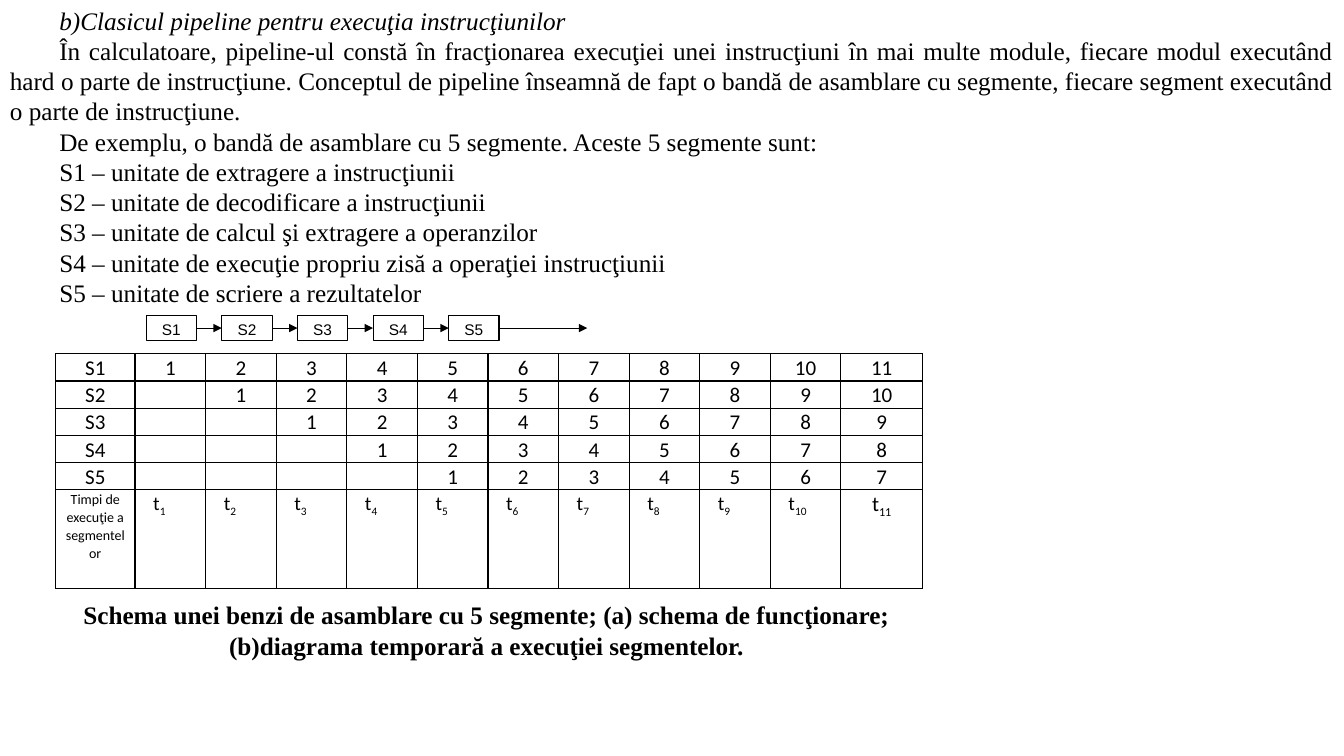
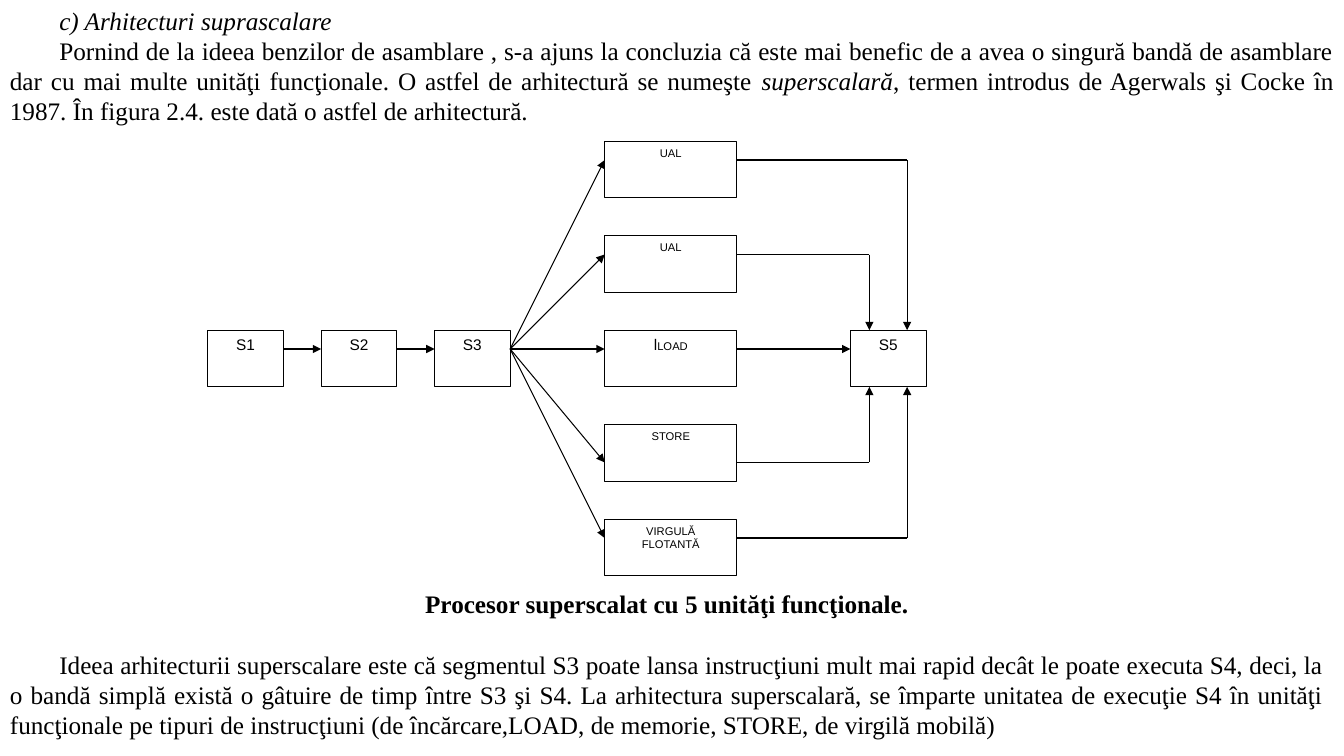
import dataclasses

import lxml.etree
import pptx
import pptx.dml.color
import pptx.enum.shapes
import pptx.enum.text
import pptx.oxml.ns
import pptx.util

ALIGN = pptx.enum.text.PP_ALIGN
Inches = pptx.util.Inches
Pt = pptx.util.Pt
qn = pptx.oxml.ns.qn


@dataclasses.dataclass(frozen=True)
class Theme:
    ink: pptx.dml.color.RGBColor = pptx.dml.color.RGBColor(0, 0, 0)
    paper: pptx.dml.color.RGBColor = pptx.dml.color.RGBColor(255, 255, 255)
    serif: str = "Times New Roman"
    sans: str = "Arial"
    table_font: str = "Calibri"
    body: float = 18
    label: float = 11
    small: float = 8
    cell: float = 15
    time: float = 14
    note: float = 10
    line: float = 0.75
    border: float = 1
    indent: float = 0.49
    body_spacing: float = 1.0
    cell_spacing: float = 1.07


THEME = Theme()
WIDTH, HEIGHT = 13.33, 7.5

PIPELINE_TITLE = "b)Clasicul pipeline pentru execuţia instrucţiunilor"
PIPELINE_TEXT = [
    "În calculatoare, pipeline-ul constă în fracţionarea execuţiei unei instrucţiuni în mai multe module, "
    "fiecare modul executând hard o parte de instrucţiune. Conceptul de pipeline înseamnă de fapt o bandă "
    "de asamblare cu segmente, fiecare segment executând o parte de instrucţiune.",
    "De exemplu, o bandă de asamblare cu 5 segmente. Aceste 5 segmente sunt:",
    "S1 – unitate de extragere a instrucţiunii",
    "S2 – unitate de decodificare a instrucţiunii",
    "S3 – unitate de calcul şi extragere a operanzilor",
    "S4 – unitate de execuţie propriu zisă a operaţiei instrucţiunii",
    "S5 – unitate de scriere a rezultatelor",
]
SEGMENTS = ["S1", "S2", "S3", "S4", "S5"]
TIMES = 11
TIMES_LABEL = "Timpi de execuţie a segmentelor"
PIPELINE_CAPTION = (
    "Schema unei benzi de asamblare cu 5 segmente; (a) schema de funcţionare; "
    "(b)diagrama temporară a execuţiei segmentelor."
)

SUPERSCALAR_TITLE = "c) Arhitecturi suprascalare"
SUPERSCALAR_TEXT = [
    ("Pornind de la ideea benzilor de asamblare , s-a ajuns la concluzia că este mai benefic de a avea o "
     "singură bandă de asamblare dar cu mai multe unităţi funcţionale. O astfel de arhitectură se numeşte ", {}),
    ("superscalară", {"italic": True}),
    (", termen introdus de Agerwals şi Cocke în 1987. În figura 2.4. este dată o astfel de arhitectură.", {}),
]
STAGES = [("S1", 0), ("S2", 6), ("S3", 12), ("S5", 34)]
SMALL = {"size": THEME.small}
UNITS = [
    {"label": [[("UAL", SMALL)]], "port": 1, "turn": 37},
    {"label": [[("UAL", SMALL)]], "port": 1, "turn": 35},
    {"label": [[("l", {}), ("LOAD", SMALL)]], "port": 1, "turn": None},
    {"label": [[("STORE", SMALL)]], "port": 2, "turn": 35},
    {"label": [[("VIRGULĂ", SMALL)], [("FLOTANTĂ", SMALL)]], "port": 1, "turn": 37},
]
SUPERSCALAR_CAPTION = "Procesor superscalat cu 5 unităţi funcţionale."
SUPERSCALAR_CLOSING = (
    "Ideea arhitecturii superscalare este că segmentul S3 poate lansa instrucţiuni mult mai rapid decât le "
    "poate executa S4, deci, la o bandă simplă există o gâtuire de timp între S3 şi S4. La arhitectura "
    "superscalară, se împarte unitatea de execuţie S4 în unităţi funcţionale pe tipuri de instrucţiuni "
    "(de încărcare,LOAD, de memorie, STORE, de virgilă mobilă)"
)


@dataclasses.dataclass(frozen=True)
class Grid:
    left: float
    top: float
    cell: float

    def point(self, column, row):
        return Inches(self.left + column * self.cell), Inches(self.top + row * self.cell)

    def size(self, columns, rows):
        return Inches(columns * self.cell), Inches(rows * self.cell)


def write(para, spans, font, size, align=ALIGN.CENTER, spacing=None):
    para.alignment = align
    if spacing:
        para.line_spacing = spacing
    for text, style in spans:
        span = para.add_run()
        span.text = text
        span.font.name = font
        span.font.size = Pt(style.get("size", size))
        span.font.color.rgb = THEME.ink
        span.font.bold = style.get("bold", False)
        span.font.italic = style.get("italic", False)
        if "baseline" in style:
            span.font._element.set("baseline", str(style["baseline"]))


def fill_frame(frame, paragraphs, font, size, align=ALIGN.CENTER, spacing=None):
    for index, spans in enumerate(paragraphs):
        para = frame.add_paragraph() if index else frame.paragraphs[0]
        write(para, spans, font, size, align, spacing)


def add_text(page, place, paragraphs, align):
    frame = page.shapes.add_textbox(*map(Inches, place)).text_frame
    frame.word_wrap = True
    fill_frame(frame, paragraphs, THEME.serif, THEME.body, align, THEME.body_spacing)
    return frame.paragraphs


def indent(para):
    para._p.get_or_add_pPr().set("indent", str(Inches(THEME.indent)))


def add_opening(page, title, paragraphs, height):
    spans = [[(title, {"italic": True})], *paragraphs]
    for para in add_text(page, (0, 0, WIDTH, height), spans, ALIGN.JUSTIFY):
        indent(para)


def add_box(page, grid, place, extent, label):
    box = page.shapes.add_shape(
        pptx.enum.shapes.MSO_SHAPE.RECTANGLE, *grid.point(*place), *grid.size(*extent))
    box.shadow.inherit = False
    box.fill.solid()
    box.fill.fore_color.rgb = THEME.paper
    box.line.color.rgb = THEME.ink
    box.line.width = Pt(THEME.line)
    box.text_frame.vertical_anchor = pptx.enum.text.MSO_ANCHOR.TOP
    fill_frame(box.text_frame, label, THEME.sans, THEME.label)
    return box


def add_line(page, grid, start, end, arrow=True):
    line = page.shapes.add_connector(
        pptx.enum.shapes.MSO_CONNECTOR.STRAIGHT, *grid.point(*start), *grid.point(*end))
    line.line.color.rgb = THEME.ink
    line.line.width = Pt(THEME.line)
    if arrow:
        lxml.etree.SubElement(line.line._get_or_add_ln(), qn("a:tailEnd"), type="triangle")
    lxml.etree.SubElement(line._element.spPr, qn("a:effectLst"))
    return line


def add_pipeline(page):
    grid = Grid(1.45, 3.13, 0.25)
    step, wide, high = 3, 2, 1
    boxes = [add_box(page, grid, (index * step, 0), (wide, high), [[(name, {})]])
             for index, name in enumerate(SEGMENTS)]
    for index, box in enumerate(boxes):
        start = index * step + wide
        last = index == len(boxes) - 1
        line = add_line(page, grid, (start, high / 2), (start + (3.5 if last else 1), high / 2))
        line.begin_connect(box, 3)
        if not last:
            line.end_connect(boxes[index + 1], 1)


def style_cell(cell):
    cell.fill.background()
    cell.margin_left = cell.margin_right = Inches(0.09)
    cell.margin_top = cell.margin_bottom = 0
    properties = cell._tc.get_or_add_tcPr()
    for index, side in enumerate(("a:lnL", "a:lnR", "a:lnT", "a:lnB")):
        border = lxml.etree.Element(qn(side), w=str(Pt(THEME.border)))
        paint = lxml.etree.SubElement(border, qn("a:solidFill"))
        lxml.etree.SubElement(paint, qn("a:srgbClr"), val=str(THEME.ink))
        properties.insert(index, border)


def time_spans(time, size):
    return [("t", {"size": size}), (str(time), {"size": size, "baseline": -25000})]


def add_timing_table(page):
    widths = [0.79] + [0.7] * (TIMES - 1) + [0.81]
    heights = [0.27] * len(SEGMENTS) + [0.98]
    table = page.shapes.add_table(
        len(heights), len(widths), Inches(0.55), Inches(3.51),
        Inches(sum(widths)), Inches(sum(heights))).table
    table.first_row = table.horz_banding = False
    for column, width in zip(table.columns, widths):
        column.width = Inches(width)
    for row, height in zip(table.rows, heights):
        row.height = Inches(height)

    rows = [[[(name, {})]] + [[(str(time - delay), {})] if time > delay else []
                             for time in range(1, TIMES + 1)]
            for delay, name in enumerate(SEGMENTS)]
    rows.append([[(TIMES_LABEL, {"size": THEME.note})]]
                + [time_spans(time, THEME.time) for time in range(1, TIMES)]
                + [time_spans(TIMES, THEME.cell)])
    for row_index, row in enumerate(rows):
        for column_index, spans in enumerate(row):
            cell = table.cell(row_index, column_index)
            style_cell(cell)
            para = cell.text_frame.paragraphs[0]
            align = ALIGN.CENTER
            if row_index == len(SEGMENTS) and 0 < column_index < TIMES:
                align = ALIGN.LEFT
                cell.margin_left = Inches(0.18)
            write(para, spans, THEME.table_font, THEME.cell, align, THEME.cell_spacing)
            if not spans:
                lxml.etree.SubElement(para._p, qn("a:endParaRPr"), sz=str(THEME.cell * 100))


def add_superscalar(page):
    grid = Grid(2.06, 1.4, 3 / 16)
    stage_wide, unit_wide, high = 4, 7, 3
    unit_left, unit_step, stage_row = 21, 5, 10
    axis = stage_row + 1
    for name, column in STAGES:
        add_box(page, grid, (column, stage_row), (stage_wide, high), [[(name, {})]])
    columns = [column for name, column in STAGES]
    fork, merge = columns[2] + stage_wide, columns[3]
    for left, right in zip(columns[:2], columns[1:3]):
        add_line(page, grid, (left + stage_wide, axis), (right, axis))
    for index, unit in enumerate(UNITS):
        top = index * unit_step
        port, turn, exit_column = top + unit["port"], unit["turn"], unit_left + unit_wide
        add_box(page, grid, (unit_left, top), (unit_wide, high), unit["label"])
        add_line(page, grid, (fork, axis), (unit_left, port))
        if turn is None:
            add_line(page, grid, (exit_column, port), (merge, port))
        else:
            edge = stage_row if port < axis else stage_row + high
            add_line(page, grid, (exit_column, port), (turn, port), arrow=False)
            add_line(page, grid, (turn, port), (turn, edge))


def main():
    deck = pptx.Presentation()
    deck.slide_width, deck.slide_height = Inches(WIDTH), Inches(HEIGHT)
    blank = deck.slide_layouts[6]

    page = deck.slides.add_slide(blank)
    add_opening(page, PIPELINE_TITLE, [[(text, {})] for text in PIPELINE_TEXT], 3.13)
    add_pipeline(page)
    add_timing_table(page)
    add_text(page, (0.55, 5.9, 8.55, 0.71), [[(PIPELINE_CAPTION, {"bold": True})]], ALIGN.CENTER)

    page = deck.slides.add_slide(blank)
    add_opening(page, SUPERSCALAR_TITLE, [SUPERSCALAR_TEXT], 1.31)
    add_superscalar(page)
    caption, closing = add_text(
        page, (0, 5.79, WIDTH - 0.1, 1.62),
        [[(SUPERSCALAR_CAPTION, {"bold": True})], [(SUPERSCALAR_CLOSING, {})]], ALIGN.CENTER)
    closing.alignment = ALIGN.JUSTIFY
    closing.space_before = Pt(THEME.body * 1.2)
    indent(closing)

    deck.save("out.pptx")


if __name__ == "__main__":
    main()
